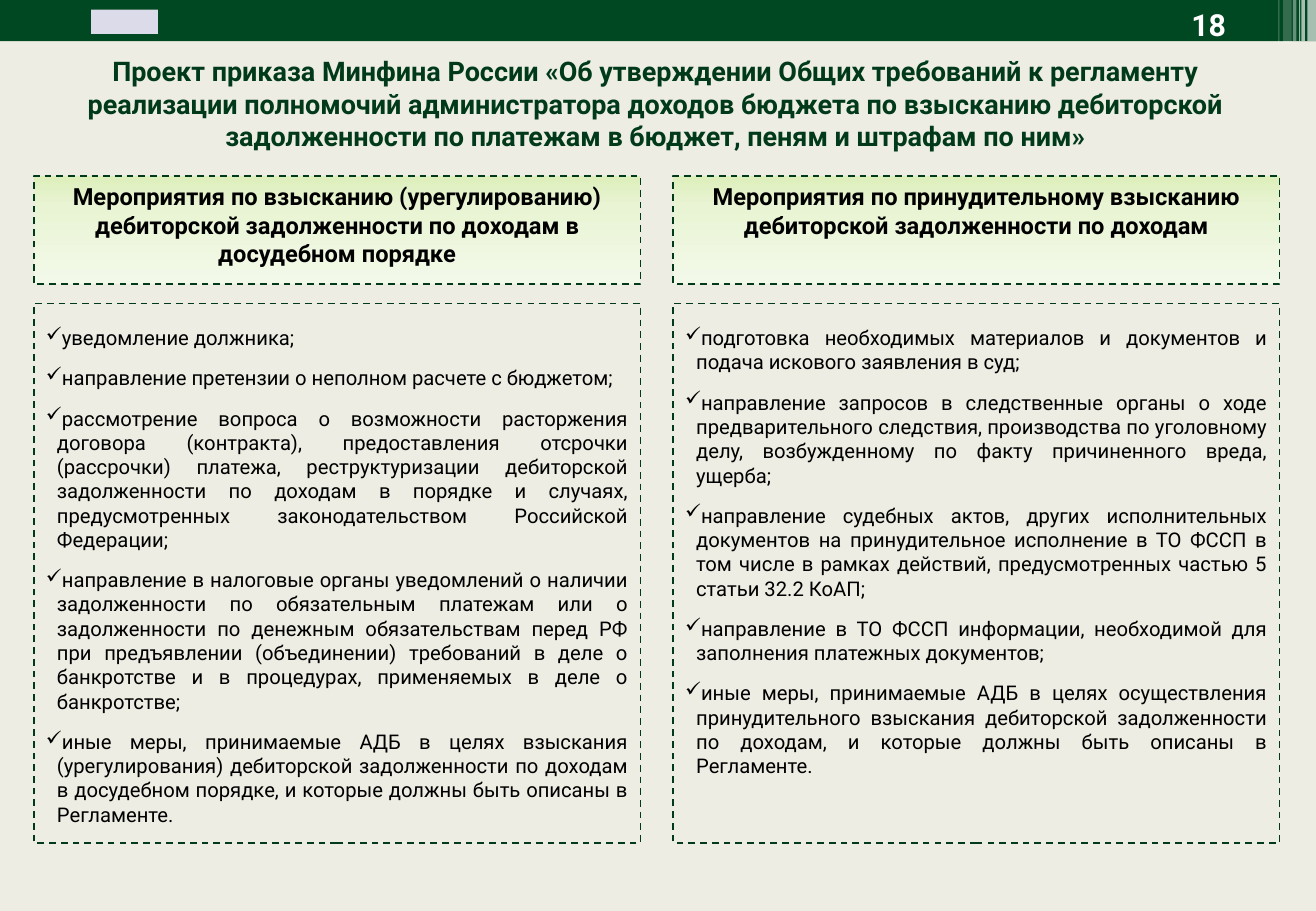
import pptx
import pptx.dml.color
import pptx.enum.dml
import pptx.enum.shapes
import pptx.enum.text
import pptx.oxml
import pptx.oxml.ns
import pptx.util

RGBColor = pptx.dml.color.RGBColor
Inches = pptx.util.Inches
Pt = pptx.util.Pt
ALIGN = pptx.enum.text.PP_ALIGN
ANCHOR = pptx.enum.text.MSO_ANCHOR
qn = pptx.oxml.ns.qn

BACKGROUND = RGBColor(0xED, 0xED, 0xE3)
BANNER_GREEN = RGBColor(0x00, 0x48, 0x21)
DARK_GREEN = RGBColor(0x00, 0x3A, 0x1A)
EMBLEM_GREY = RGBColor(0xDB, 0xDB, 0xE9)
BLACK = RGBColor(0, 0, 0)
WHITE = RGBColor(0xFF, 0xFF, 0xFF)
HEADING_STOPS = [
    (0, RGBColor(0xDD, 0xEF, 0xBB)),
    (28, RGBColor(0xE9, 0xF4, 0xD4)),
    (100, RGBColor(0xF3, 0xF9, 0xE9)),
]

TITLE = (
    "Проект приказа Минфина России «Об утверждении Общих требований к регламенту "
    "реализации полномочий администратора доходов бюджета по взысканию дебиторской "
    "задолженности по платежам в бюджет, пеням и штрафам по ним»"
)
COLUMNS = [
    (
        "Мероприятия по взысканию (урегулированию) дебиторской задолженности "
        "по доходам в досудебном порядке",
        [
            "уведомление должника;",
            "направление претензии о неполном расчете с бюджетом;",
            "рассмотрение вопроса о возможности расторжения договора (контракта), "
            "предоставления отсрочки (рассрочки) платежа, реструктуризации дебиторской "
            "задолженности по доходам в порядке и случаях, предусмотренных "
            "законодательством Российской Федерации;",
            "направление в налоговые органы уведомлений о наличии задолженности по "
            "обязательным платежам или о задолженности по денежным обязательствам перед "
            "РФ при предъявлении (объединении) требований в деле о банкротстве и в "
            "процедурах, применяемых в деле о банкротстве;",
            "иные меры, принимаемые АДБ в целях взыскания (урегулирования) дебиторской "
            "задолженности по доходам в досудебном порядке, и которые должны быть "
            "описаны в Регламенте.",
        ],
    ),
    (
        "Мероприятия по принудительному взысканию дебиторской задолженности по доходам",
        [
            "подготовка необходимых материалов и документов и подача искового "
            "заявления в суд;",
            "направление запросов в следственные органы о ходе предварительного "
            "следствия, производства по уголовному делу, возбужденному по факту "
            "причиненного вреда, ущерба;",
            "направление судебных актов, других исполнительных документов на "
            "принудительное исполнение в ТО ФССП в том числе в рамках действий, "
            "предусмотренных частью 5 статьи 32.2 КоАП;",
            "направление в ТО ФССП информации, необходимой для заполнения "
            "платежных документов;",
            "иные меры, принимаемые АДБ в целях осуществления принудительного "
            "взыскания дебиторской задолженности по доходам, и которые должны быть "
            "описаны в Регламенте.",
        ],
    ),
]
# left, width, height, opacity in percent
BANNER_STRIPES = [
    (10.76, 0.07, 0.34, 65),
    (10.71, 0.03, 0.34, 65),
    (10.69, 0.01, 0.34, 60),
    (10.64, 0.03, 0.34, 40),
    (10.56, 0.07, 0.36, 20),
    (10.52, 0.01, 0.36, 30),
]


class SlideBuilder:
    font_name = "Roboto"

    def __init__(self, page):
        self.page = page
        page.background.fill.solid()
        page.background.fill.fore_color.rgb = BACKGROUND

    def set_text(self, frame, texts, size, color, align, bold=False, anchor=ANCHOR.TOP):
        frame.word_wrap = True
        frame.auto_size = pptx.enum.text.MSO_AUTO_SIZE.NONE
        frame.vertical_anchor = anchor
        for index, text in enumerate(texts):
            para = frame.paragraphs[0] if index == 0 else frame.add_paragraph()
            para.text = text
            para.alignment = align
            para.font.name = self.font_name
            para.font.size = Pt(size)
            para.font.bold = bold
            para.font.color.rgb = color

    def title(self, text, left, top, width, height):
        box = self.page.shapes.title
        box.left, box.top = Inches(left), Inches(top)
        box.width, box.height = Inches(width), Inches(height)
        self.set_text(box.text_frame, [text], 16, DARK_GREEN, ALIGN.CENTER, bold=True)

    def label(self, text, left, top, width, height):
        box = self.page.shapes.add_textbox(
            Inches(left), Inches(top), Inches(width), Inches(height))
        self.set_text(box.text_frame, [text], 18, WHITE, ALIGN.RIGHT,
                      bold=True, anchor=ANCHOR.MIDDLE)

    def rectangle(self, left, top, width, height, color=None, opacity=100):
        box = self.page.shapes.add_shape(
            pptx.enum.shapes.MSO_SHAPE.RECTANGLE,
            Inches(left), Inches(top), Inches(width), Inches(height))
        box.shadow.inherit = False
        box.line.fill.background()
        if color is None:
            box.fill.background()
            return box
        box.fill.solid()
        box.fill.fore_color.rgb = color
        if opacity < 100:
            tint = box._element.spPr.find(".//" + qn("a:srgbClr"))
            tint.append(self.element("alpha", val=opacity * 1000))
        return box

    def dashed_box(self, left, top, width, height):
        box = self.rectangle(left, top, width, height)
        box.line.color.rgb = DARK_GREEN
        box.line.width = Pt(1)
        box.line.dash_style = pptx.enum.dml.MSO_LINE.DASH
        return box

    def heading(self, text, left, top, width, height):
        box = self.dashed_box(left, top, width, height)
        box.fill.gradient()
        box.fill.gradient_angle = 270
        stops = box._element.spPr.find(".//" + qn("a:gsLst"))
        for stop in list(stops):
            stops.remove(stop)
        for position, color in HEADING_STOPS:
            stop = self.element("gs", pos=position * 1000)
            stop.append(self.element("srgbClr", val=color))
            stops.append(stop)
        self.set_text(box.text_frame, [text], 14, BLACK, ALIGN.CENTER, bold=True)

    def checklist(self, items, left, top, width, height):
        box = self.dashed_box(left, top, width, height)
        frame = box.text_frame
        frame.margin_top = Inches(0.18)
        self.set_text(frame, items, 12, BLACK, ALIGN.JUSTIFY)
        for para in frame.paragraphs:
            para.space_after = Pt(9.4)
            properties = para._p.get_or_add_pPr()
            properties.set("marL", str(Inches(0.09)))
            properties.set("indent", str(Inches(-0.09)))
            bullet = self.element("buChar", char="✓")
            properties.insert_element_before(bullet, "a:tabLst", "a:defRPr", "a:extLst")

    @staticmethod
    def element(tag, **attributes):
        """Return a new DrawingML element with the given attributes."""
        node = pptx.oxml.parse_xml(f"<a:{tag} {pptx.oxml.ns.nsdecls('a')}/>")
        for name, value in attributes.items():
            node.set(name, str(value))
        return node


def main():
    deck = pptx.Presentation()
    deck.slide_width, deck.slide_height = Inches(10.83), Inches(7.5)
    builder = SlideBuilder(deck.slides.add_slide(deck.slide_layouts[5]))

    builder.rectangle(0, 0, 10.83, 0.34, BANNER_GREEN)
    for left, width, height, opacity in BANNER_STRIPES:
        builder.rectangle(left, 0, width, height, WHITE, opacity)
    builder.rectangle(0.75, 0.08, 0.55, 0.2, EMBLEM_GREY)
    builder.label("18", 9.36, 0, 0.83, 0.4)
    builder.title(TITLE, 0.61, 0.4, 9.57, 0.91)

    for index, (heading, items) in enumerate(COLUMNS):
        left = 0.28 + index * 5.26
        builder.heading(heading, left, 1.45, 4.99, 0.89)
        builder.checklist(items, left, 2.5, 4.99, 4.44)

    deck.save("out.pptx")


if __name__ == "__main__":
    main()
